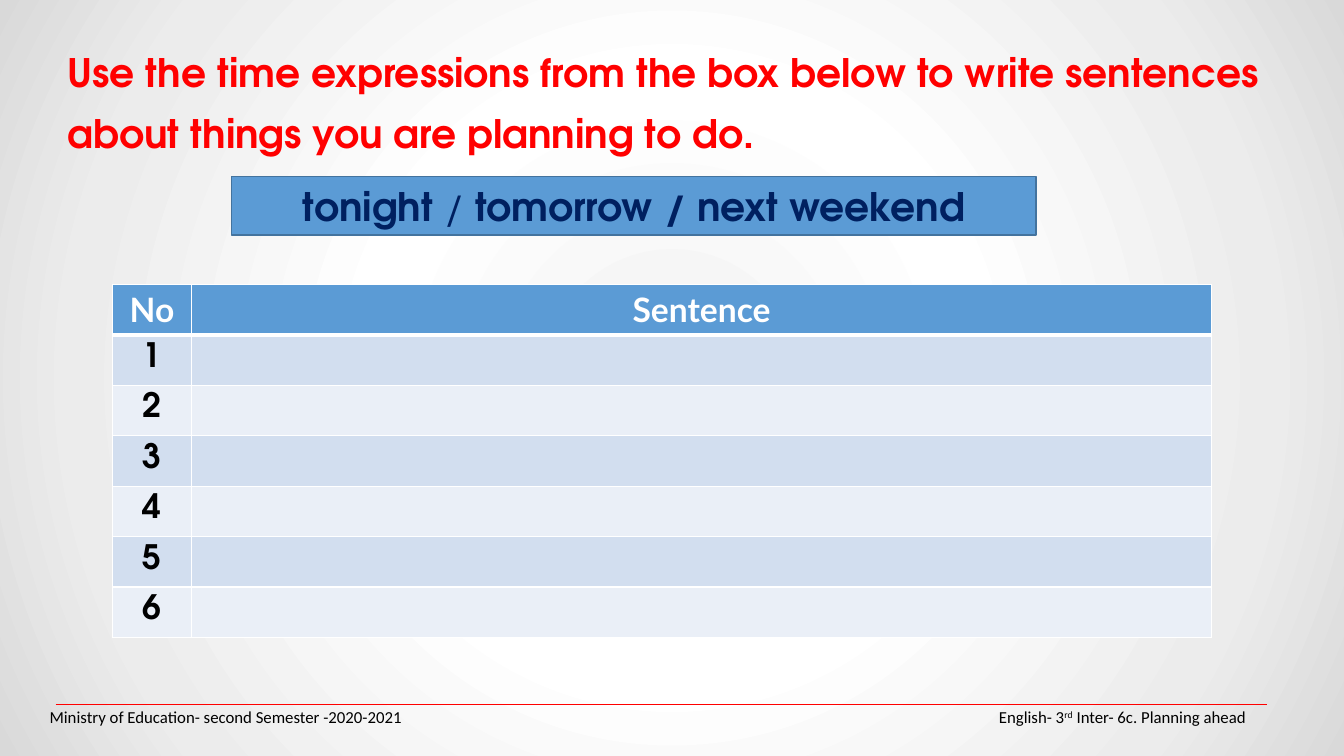
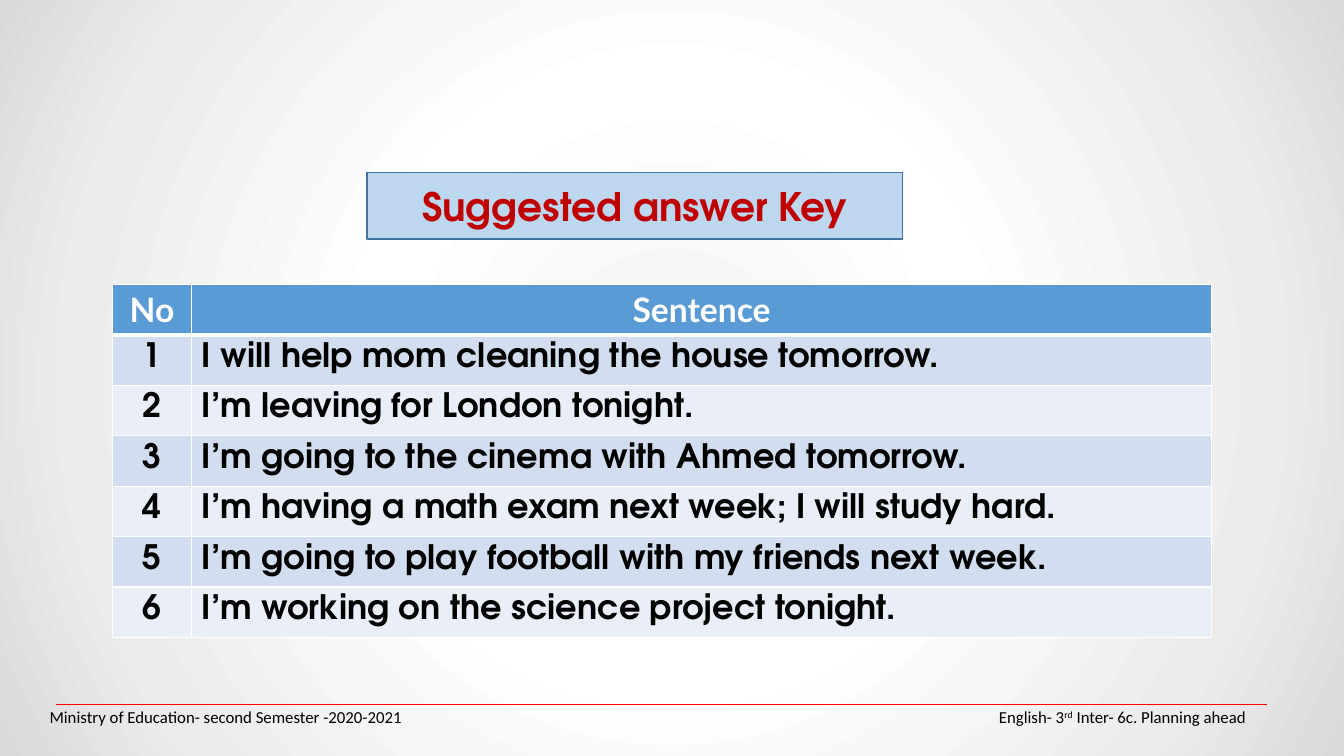
from dataclasses import dataclass
from typing import Optional

from pptx import Presentation
from pptx.dml.color import RGBColor
from pptx.enum.shapes import MSO_CONNECTOR, MSO_SHAPE
from pptx.enum.text import MSO_ANCHOR, MSO_AUTO_SIZE, PP_ALIGN
from pptx.oxml import parse_xml
from pptx.oxml.ns import nsdecls, qn
from pptx.util import Cm, Pt

# Shared fonts and colours
DISPLAY, HEADING, SMALL = "TeX Gyre Adventor", "Lato", "Calibri"
RED, DARK_RED, NAVY = "FF0000", "C00000", "002060"
BLUE, PALE_BLUE, OUTLINE = "5B9BD5", "BDD7EE", "43739E"
BLACK, WHITE = "000000", "FFFFFF"
ROW_BANDS = ("D2DEEF", "EAEFF7")
BACKGROUND_STOPS = ((0, "F2F2F2"), (39, "FFFFFF"), (78, "ECECEC"), (100, "D9D9D9"))

ANSWERS = (
    "I will help mom cleaning the house tomorrow.",
    "I’m leaving for London tonight.",
    "I’m going to the cinema with Ahmed tomorrow.",
    "I’m having a math exam next week; I will study hard.",
    "I’m going to play football with my friends next week.",
    "I’m working on the science project tonight.",
)


@dataclass(frozen=True)
class Area:
    """A rectangle in centimetres."""
    left: float
    top: float
    width: float
    height: float

    def lengths(self) -> tuple:
        return Cm(self.left), Cm(self.top), Cm(self.width), Cm(self.height)


@dataclass(frozen=True)
class TextStyle:
    font: str
    size: float
    color: str
    bold: bool = True
    align: PP_ALIGN = PP_ALIGN.CENTER
    spacing: Optional[float] = None


@dataclass(frozen=True)
class Span:
    text: str
    bold: Optional[bool] = None
    raised: bool = False


INSTRUCTION = TextStyle(DISPLAY, 28, RED, align=PP_ALIGN.LEFT, spacing=43.2)
EXPRESSIONS = TextStyle(DISPLAY, 28, NAVY)
ANSWER_TITLE = TextStyle(DISPLAY, 28, DARK_RED)
TABLE_HEAD = TextStyle(HEADING, 24, WHITE)
NUMBER = TextStyle(DISPLAY, 24, BLACK, spacing=24)
SENTENCE = TextStyle(DISPLAY, 24, BLACK, align=PP_ALIGN.LEFT, spacing=24)
FOOTER_LEFT = TextStyle(SMALL, 12, BLACK, bold=False, align=PP_ALIGN.LEFT)
FOOTER_RIGHT = TextStyle(SMALL, 12, BLACK, bold=False, align=PP_ALIGN.RIGHT)


def rgb(value: str) -> RGBColor:
    return RGBColor.from_string(value)


def write(frame, style: TextStyle, *spans: Span) -> None:
    """Fill the first paragraph of a text frame."""
    para = frame.paragraphs[0]
    para.alignment = style.align
    if style.spacing:
        para.line_spacing = Pt(style.spacing)
    para.font.name = style.font
    para.font.size = Pt(style.size)
    para.font.bold = style.bold
    para.font.color.rgb = rgb(style.color)
    for span in spans:
        run = para.add_run()
        run.text = span.text
        if span.bold is not None:
            run.font.bold = span.bold
        if span.raised:
            run._r.get_or_add_rPr().set("baseline", "30000")


def place(box, area: Area, anchor: MSO_ANCHOR) -> None:
    box.left, box.top, box.width, box.height = area.lengths()
    box.text_frame.word_wrap = True
    box.text_frame.auto_size = MSO_AUTO_SIZE.NONE
    box.text_frame.vertical_anchor = anchor


def paint(box, fill: str) -> None:
    box.fill.solid()
    box.fill.fore_color.rgb = rgb(fill)
    box.line.color.rgb = rgb(OUTLINE)
    box.line.width = Pt(1)


def set_background(master) -> None:
    """Give every page the circular grey gradient."""
    master.background.fill.background()
    stops = "".join(
        f'<a:gs pos="{percent * 1000}"><a:srgbClr val="{color}"/></a:gs>'
        for percent, color in BACKGROUND_STOPS
    )
    gradient = parse_xml(
        f'<a:gradFill {nsdecls("a")} rotWithShape="1"><a:gsLst>{stops}</a:gsLst>'
        '<a:path path="circle"><a:fillToRect l="50000" t="50000" r="50000" b="50000"/>'
        "</a:path></a:gradFill>"
    )
    properties = master.element.find(".//" + qn("p:bgPr"))
    properties.replace(properties[0], gradient)


def add_footer(page) -> None:
    rule = page.shapes.add_connector(
        MSO_CONNECTOR.STRAIGHT, Cm(1.4), Cm(17.75), Cm(31.92), Cm(17.75))
    rule.line.color.rgb = rgb(RED)
    rule.line.width = Pt(0.75)
    rule._element.spPr.append(parse_xml(f'<a:effectLst {nsdecls("a")}/>'))

    parts = (
        (Area(1, 17.66, 14, 0.8), FOOTER_LEFT,
         (Span("Ministry of Education- second Semester -2020-2021"),)),
        (Area(17.65, 17.66, 14, 0.8), FOOTER_RIGHT,
         (Span("English- 3"), Span("rd", raised=True),
          Span(" Inter- 6c. Planning ahead"))),
    )
    for area, style, spans in parts:
        box = page.shapes.add_textbox(*area.lengths())
        place(box, area, MSO_ANCHOR.MIDDLE)
        write(box.text_frame, style, *spans)


def set_borders(cell, top: float, bottom: float) -> None:
    """Draw white cell borders; call before the cell is filled."""
    properties = cell._tc.get_or_add_tcPr()
    for side, points in (("L", 1), ("R", 1), ("T", top), ("B", bottom)):
        properties.append(parse_xml(
            f'<a:ln{side} {nsdecls("a")} w="{Pt(points)}"><a:solidFill>'
            f'<a:srgbClr val="{WHITE}"/></a:solidFill></a:ln{side}>'))


def add_sentence_table(page, sentences: tuple) -> None:
    rows = [("No", "Sentence")]
    rows += [(str(number), text) for number, text in enumerate(sentences, 1)]
    area = Area(2.83, 7.17, 27.7, 8.89)
    table = page.shapes.add_table(len(rows), 2, *area.lengths()).table
    for column, width in zip(table.columns, (2, 25.7)):
        column.width = Cm(width)

    for index, texts in enumerate(rows):
        table.rows[index].height = Cm(area.height / len(rows))
        styles = (NUMBER, SENTENCE) if index else (TABLE_HEAD, TABLE_HEAD)
        fill = ROW_BANDS[(index - 1) % 2] if index else BLUE
        for cell, text, style in zip(table.rows[index].cells, texts, styles):
            set_borders(cell, 3 if index == 1 else 1, 3 if index == 0 else 1)
            cell.fill.solid()
            cell.fill.fore_color.rgb = rgb(fill)
            if text:
                write(cell.text_frame, style, Span(text))


def add_page(deck, sentences: tuple):
    """Add a page with the shared footer and table."""
    page = deck.slides.add_slide(deck.slide_layouts[5])
    add_footer(page)
    add_sentence_table(page, sentences)
    return page


def build_task(deck) -> None:
    page = add_page(deck, ("",) * len(ANSWERS))
    title = page.shapes.title
    place(title, Area(1.45, 0.76, 32.4, 3.18), MSO_ANCHOR.TOP)
    write(title.text_frame, INSTRUCTION, Span(
        "Use the time expressions from the box below to write sentences "
        "about things you are planning to do."))

    # Box of time expressions
    area = Area(5.84, 4.45, 20.27, 1.47)
    box = page.shapes.add_shape(MSO_SHAPE.RECTANGLE, *area.lengths())
    box.shadow.inherit = False
    place(box, area, MSO_ANCHOR.MIDDLE)
    paint(box, BLUE)
    write(box.text_frame, EXPRESSIONS, Span("tonight "), Span("/ ", bold=False),
          Span("tomorrow / next weekend"))


def build_answer_key(deck) -> None:
    page = add_page(deck, ANSWERS)
    title = page.shapes.title
    place(title, Area(9.25, 4.34, 13.49, 1.68), MSO_ANCHOR.MIDDLE)
    paint(title, PALE_BLUE)
    write(title.text_frame, ANSWER_TITLE, Span("Suggested answer Key"))


def main() -> None:
    deck = Presentation()
    deck.slide_width, deck.slide_height = Cm(33.87), Cm(19.05)
    set_background(deck.slide_master)
    build_task(deck)
    build_answer_key(deck)
    deck.save("out.pptx")


if __name__ == "__main__":
    main()
